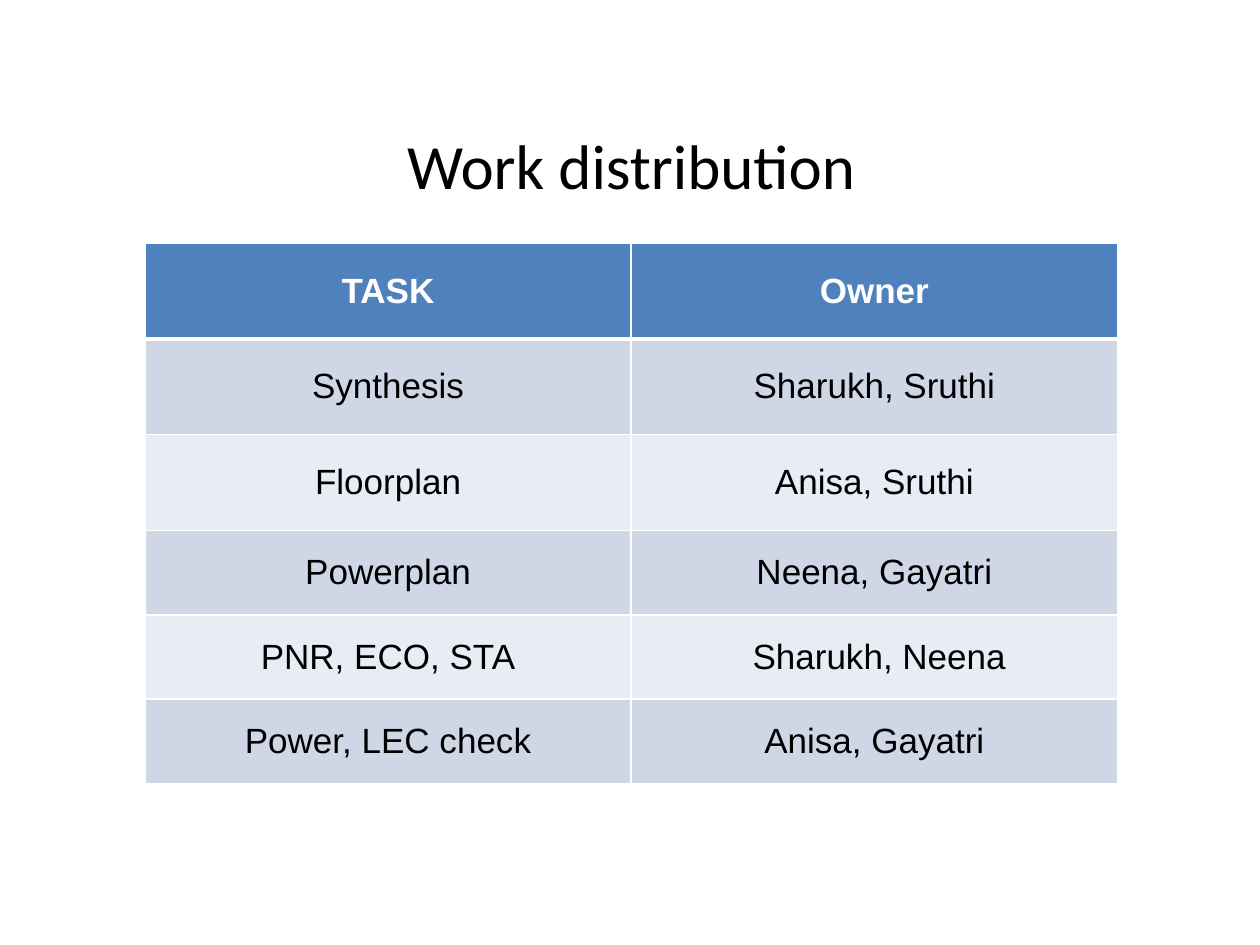
from lxml import etree
from pptx import Presentation
from pptx.dml.color import RGBColor
from pptx.enum.text import MSO_ANCHOR, PP_ALIGN
from pptx.oxml.ns import qn
from pptx.util import Inches, Pt

CENTER = PP_ALIGN.CENTER
MIDDLE = MSO_ANCHOR.MIDDLE
TITLE_ONLY = 5

BLACK = "000000"
WHITE = "FFFFFF"
HEADER_FILL = "4F81BD"
BAND_FILLS = ("CFD7E7", "E8ECF4")

ROWS = [
    ("TASK", "Owner"),
    ("Synthesis", "Sharukh, Sruthi"),
    ("Floorplan", "Anisa, Sruthi"),
    ("Powerplan", "Neena, Gayatri"),
    ("PNR, ECO, STA", " Sharukh, Neena"),
    ("Power, LEC check", "Anisa, Gayatri"),
]
ROW_HEIGHTS = [0.76] * 3 + [0.67] * 3
COLUMN_WIDTH = 3.86


def color(hex_string):
    return RGBColor.from_string(hex_string)


def format_text(text_frame, font_name, size, font_color, bold=False):
    text_frame.vertical_anchor = MIDDLE
    paragraph = text_frame.paragraphs[0]
    paragraph.alignment = CENTER
    font = paragraph.font
    font.name = font_name
    font.size = Pt(size)
    font.bold = bold
    font.color.rgb = color(font_color)


def set_borders(cell, bottom_width):
    """Draw white cell borders; they must precede the fill in the cell XML."""
    properties = cell._tc.get_or_add_tcPr()
    widths = {"a:lnL": 1, "a:lnR": 1, "a:lnT": 1, "a:lnB": bottom_width}
    for tag, width in widths.items():
        line = etree.SubElement(properties, qn(tag), w=str(Pt(width)))
        fill = etree.SubElement(line, qn("a:solidFill"))
        etree.SubElement(fill, qn("a:srgbClr"), val=WHITE)


def add_title(slide, text):
    title = slide.shapes.title
    title.left, title.top = Inches(0.51), Inches(0.68)
    title.width, title.height = Inches(9), Inches(1.25)
    title.text_frame.text = text
    format_text(title.text_frame, "Calibri", 36, BLACK)


def fill_cell(cell, text, row_index):
    is_header = row_index == 0
    set_borders(cell, bottom_width=3 if is_header else 1)
    cell.fill.solid()
    fill = HEADER_FILL if is_header else BAND_FILLS[(row_index - 1) % 2]
    cell.fill.fore_color.rgb = color(fill)
    cell.text = text
    cell.vertical_anchor = MIDDLE
    format_text(cell.text_frame, "Arial", 20,
                WHITE if is_header else BLACK, bold=is_header)


def add_task_table(slide):
    column_count = len(ROWS[0])
    table = slide.shapes.add_table(
        len(ROWS), column_count, Inches(1.15), Inches(1.93),
        Inches(COLUMN_WIDTH * column_count), Inches(sum(ROW_HEIGHTS)),
    ).table
    for column in table.columns:
        column.width = Inches(COLUMN_WIDTH)
    for row_index, texts in enumerate(ROWS):
        table.rows[row_index].height = Inches(ROW_HEIGHTS[row_index])
        for column_index, text in enumerate(texts):
            fill_cell(table.cell(row_index, column_index), text, row_index)


def main():
    presentation = Presentation()
    presentation.slide_width = Inches(10)
    presentation.slide_height = Inches(7.5)
    slide = presentation.slides.add_slide(
        presentation.slide_layouts[TITLE_ONLY])
    add_title(slide, "Work distribution")
    add_task_table(slide)
    presentation.save("out.pptx")


if __name__ == "__main__":
    main()
